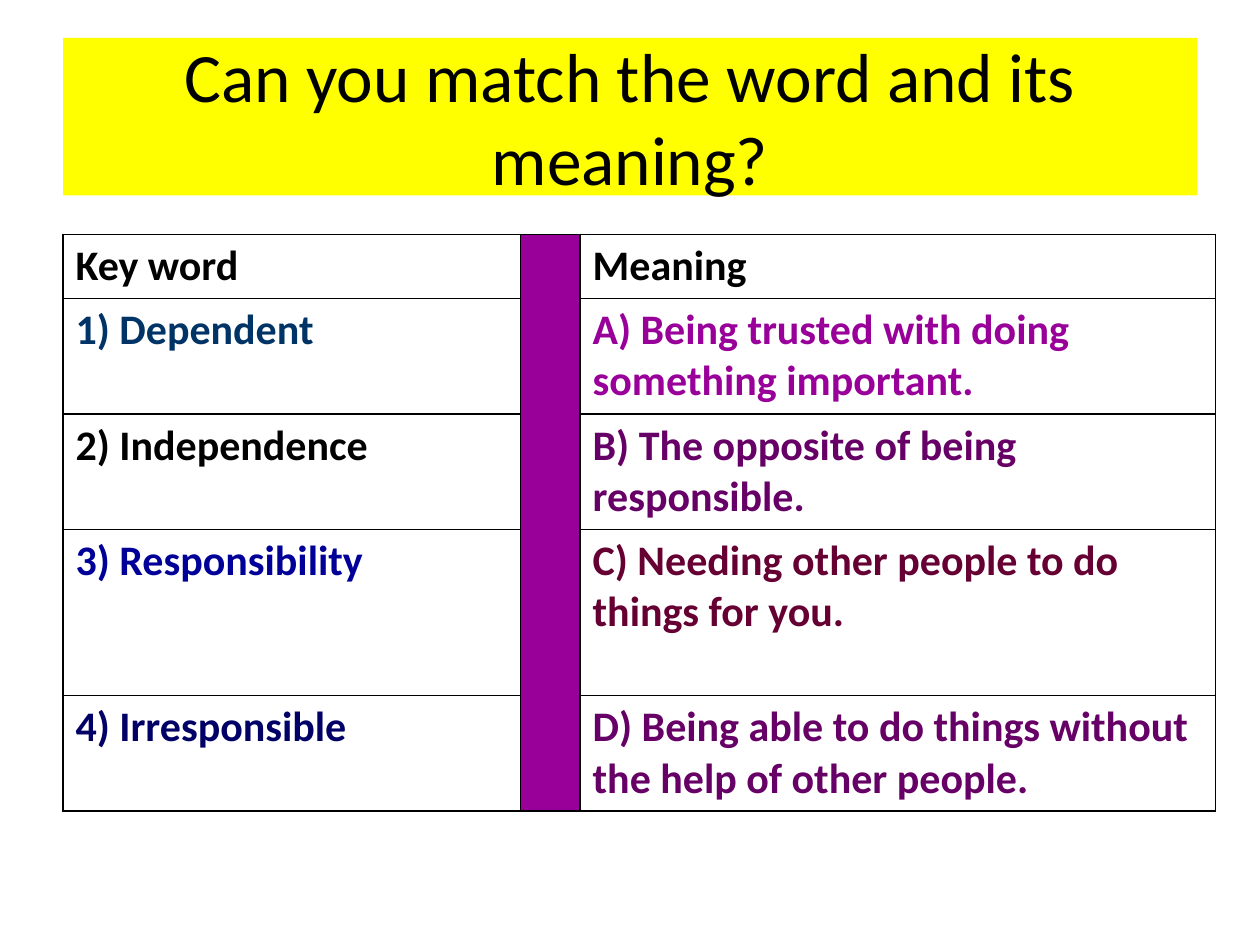
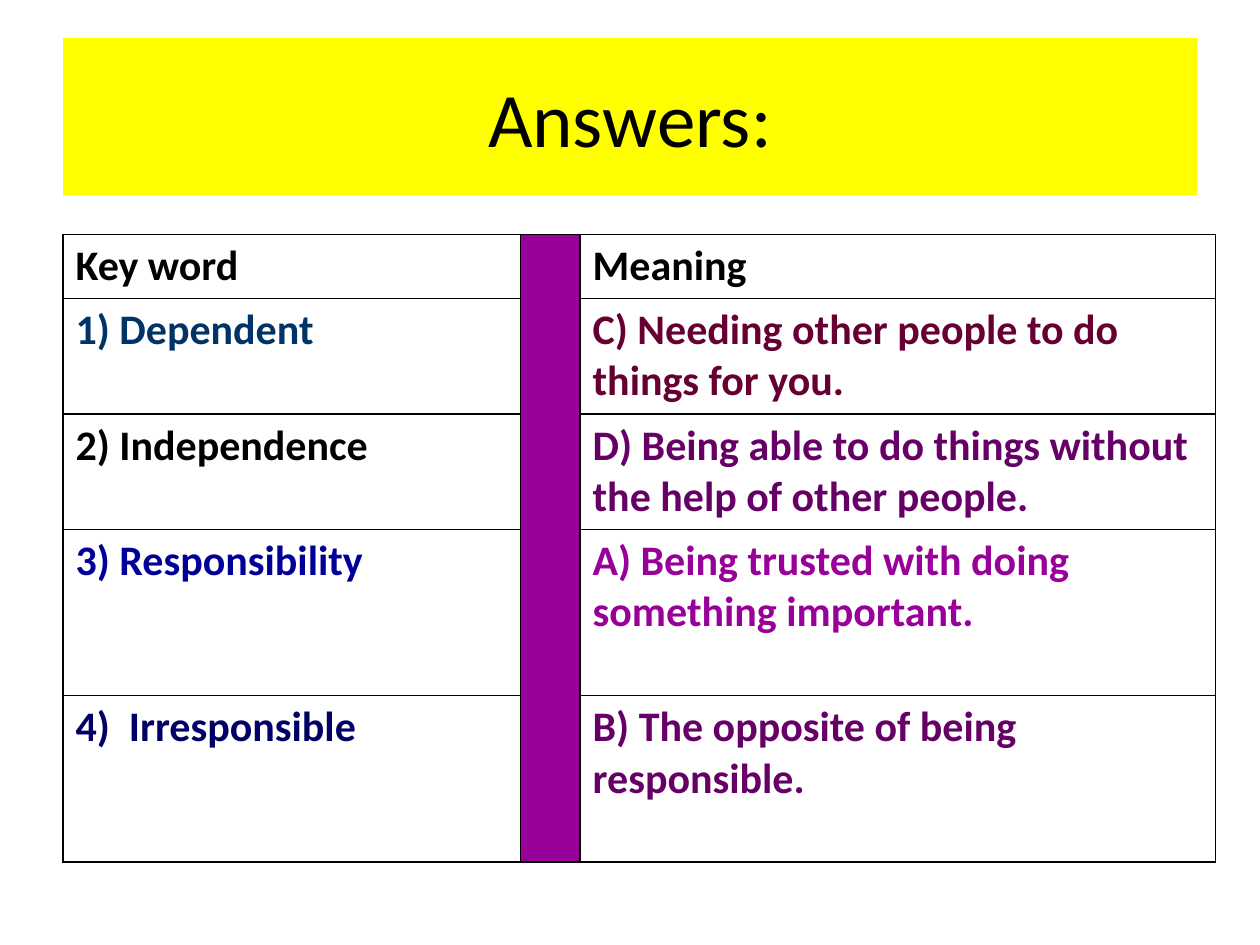
from lxml import etree
from pptx import Presentation
from pptx.dml.color import RGBColor
from pptx.enum import text as t
from pptx.oxml import ns
from pptx.util import Pt

# Content: words and meanings with their colours, then the slides
INK = {"black": "000000", "white": "FFFFFF", "yellow": "FFFF00",
       "teal": "003366", "blue": "000099", "navy": "000066",
       "violet": "990099", "plum": "660066", "wine": "660033"}
HEAD = [("Key word", "black"), ("Meaning", "black")]
WORDS = [("1) Dependent", "teal"), ("2) Independence", "black"),
         ("3) Responsibility", "blue")]
LAST = {"quiz": ("4) Irresponsible", "navy"),
        "key": ("4)  Irresponsible", "navy")}
MEANS = {
    "A": ("A) Being trusted with doing something important.", "violet"),
    "B": ("B) The opposite of being responsible.", "plum"),
    "C": ("C) Needing other people to do things for you.", "wine"),
    "D": ("D) Being able to do things without the help of other people.", "plum"),
}
SLIDES = [
    dict(title="Can you match the word and its meaning?", size=39.6,
         last="quiz", order="ABCD", rows=[36, 66, 66, 95, 66]),
    dict(title="Answers:", size=44,
         last="key", order="CDAB", rows=[36, 66, 66, 95, 95]),
]

# Shared layout, in points
FONT = "Calibri"
BAND = (36, 21.6, 648, 90)
LEFT, TOP = 36, 134
COLS = [261.5, 34, 363]


def paint(part, ink):
    part.fill.solid()
    part.fill.fore_color.rgb = RGBColor.from_string(INK[ink])


def write(frame, words, size=24, ink="black", bold=False, align=None):
    par = frame.paragraphs[0]
    par.alignment = align
    run = par.add_run()
    run.text = words
    run.font.name, run.font.size, run.font.bold = FONT, Pt(size), bold
    run.font.color.rgb = RGBColor.from_string(INK[ink])


def edge(cell):
    """Draw a thin black line on all four sides of a cell."""
    props = cell._tc.get_or_add_tcPr()
    for side in ("lnL", "lnR", "lnT", "lnB"):
        line = etree.SubElement(props, ns.qn("a:" + side), w=str(Pt(1)))
        fill = etree.SubElement(line, ns.qn("a:solidFill"))
        etree.SubElement(fill, ns.qn("a:srgbClr"), val=INK["black"])


def add_title(slide, words, size):
    band = slide.shapes.title
    band.left, band.top, band.width, band.height = map(Pt, BAND)
    paint(band, "yellow")
    frame = band.text_frame
    frame.word_wrap = True
    frame.auto_size = t.MSO_AUTO_SIZE.NONE
    frame.vertical_anchor = t.MSO_ANCHOR.MIDDLE
    write(frame, words, size=size, align=t.PP_ALIGN.CENTER)


def add_grid(slide, pairs, rows):
    grid = slide.shapes.add_table(len(rows), len(COLS), Pt(LEFT), Pt(TOP),
                                  Pt(sum(COLS)), Pt(sum(rows))).table
    grid.first_row = grid.horz_banding = False
    for col, wide in zip(grid.columns, COLS):
        col.width = Pt(wide)
    for row, high in zip(grid.rows, rows):
        row.height = Pt(high)
    # Divider column is one tall merged cell
    grid.cell(0, 1).merge(grid.cell(len(rows) - 1, 1))
    for r, (word, mean) in enumerate(pairs):
        for c, item in enumerate((word, None, mean)):
            cell = grid.cell(r, c)
            edge(cell)
            paint(cell, "white" if item else "violet")
            if item:
                write(cell.text_frame, item[0], ink=item[1], bold=True)


def main():
    deck = Presentation()
    deck.slide_width, deck.slide_height = Pt(720), Pt(540)
    for page in SLIDES:
        slide = deck.slides.add_slide(deck.slide_layouts[5])
        add_title(slide, page["title"], page["size"])
        words = WORDS + [LAST[page["last"]]]
        means = [MEANS[key] for key in page["order"]]
        add_grid(slide, [HEAD, *zip(words, means)], page["rows"])
    deck.save("out.pptx")


if __name__ == "__main__":
    main()
